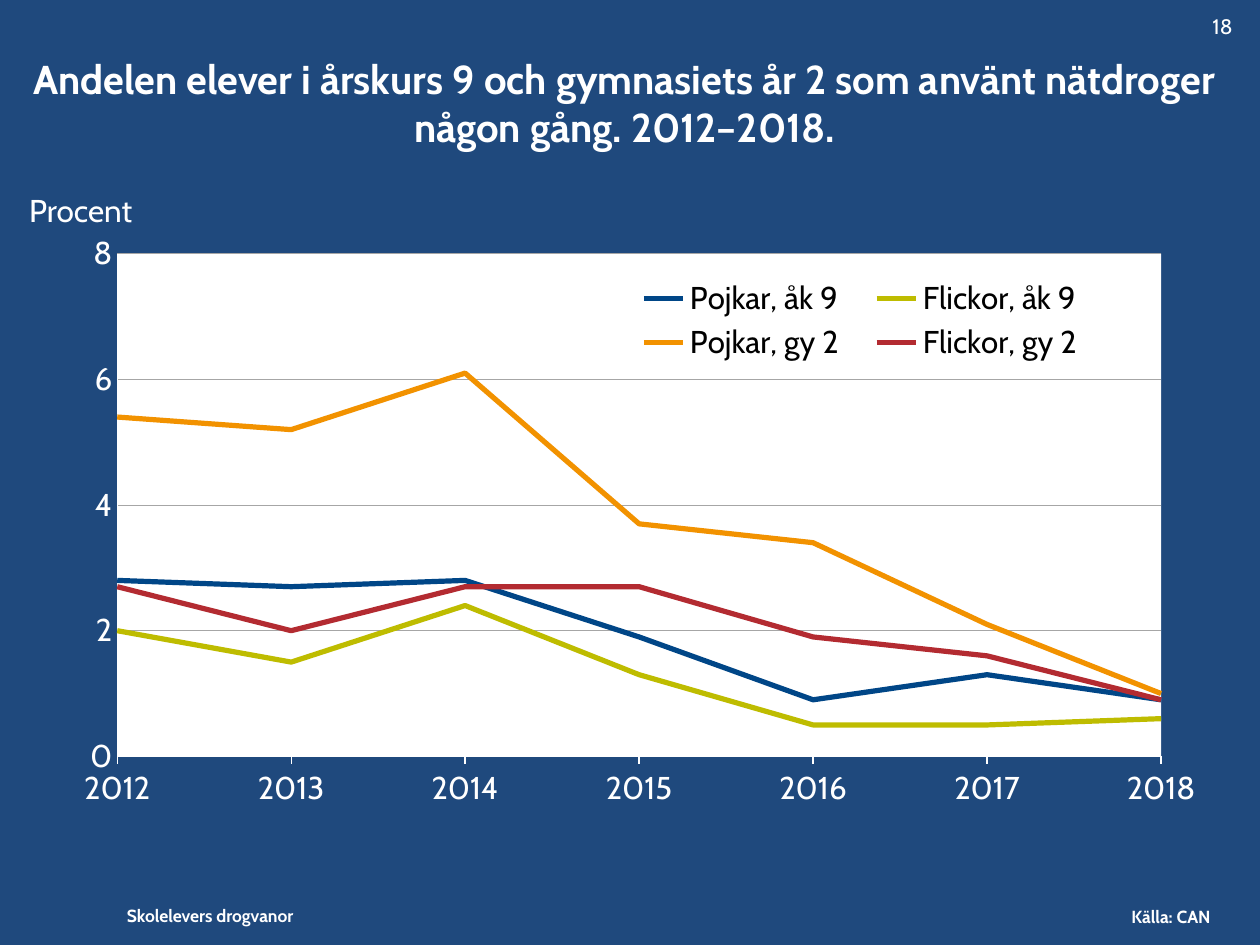
"""Build a slide with a line chart of pupils' use of drugs bought online."""
import pptx
import pptx.chart.data
import pptx.dml.color
import pptx.enum.chart
import pptx.enum.text
import pptx.oxml
import pptx.oxml.ns
import pptx.util
from pptx.util import Cm

COLOURS = {"background": "1F497D", "white": "FFFFFF", "black": "000000", "grid": "A6A6A6"}
FONT = "Cabin"
LEFT, CENTRE, RIGHT = (pptx.enum.text.PP_ALIGN.LEFT, pptx.enum.text.PP_ALIGN.CENTER,
                       pptx.enum.text.PP_ALIGN.RIGHT)
TOP, MIDDLE = pptx.enum.text.MSO_ANCHOR.TOP, pptx.enum.text.MSO_ANCHOR.MIDDLE

TEXTS = [
    ("Skolelevers drogvanor", (2.31, 18.11, 4.25, 0.69), 10, True, LEFT, TOP),
    ("Källa: CAN", (22.56, 18.14, 2.39, 0.69), 10, True, LEFT, TOP),
    ("Andelen elever i årskurs 9 och gymnasiets år 2 som använt nätdroger någon gång. 2012–2018.",
     (0.1, 0.76, 25, 2.62), 23, True, CENTRE, MIDDLE),
    ("Procent", (0.34, 3.73, 2.9, 1.02), 18, False, LEFT, MIDDLE),
    ("18", (23.6, 0.15, 1.5, 0.76), 12, False, RIGHT, TOP),
]
CHART_BOX = (0.99, 3.96, 23.11, 12.83)
PLOT_LAYOUT = (0.06, 0.09, 0.92, 0.79)
LEGEND_LAYOUT = (0.5, 0.12, 0.43, 0.15)
YEARS = [str(year) for year in range(2012, 2019)]
SERIES = [
    ("Pojkar, åk 9", "004687", (2.8, 2.7, 2.8, 1.9, 0.9, 1.3, 0.9)),
    ("Flickor, åk 9", "BEBC00", (2, 1.5, 2.4, 1.3, 0.5, 0.5, 0.6)),
    ("Pojkar, gy 2", "F29200", (5.4, 5.2, 6.1, 3.7, 3.4, 2.1, 1)),
    ("Flickor, gy 2", "B32B31", (2.7, 2, 2.7, 2.7, 1.9, 1.6, 0.9)),
]


def rgb(value):
    return pptx.dml.color.RGBColor.from_string(value)


def style_font(font, size, colour, bold=False):
    font.name = FONT
    font.size = pptx.util.Pt(size)
    font.bold = bold
    font.color.rgb = rgb(colour)


def style_line(line, colour, width):
    line.color.rgb = rgb(colour)
    line.width = pptx.util.Pt(width)


def add_text(slide, text, box, size, bold, alignment, anchor):
    frame = slide.shapes.add_textbox(*map(Cm, box)).text_frame
    frame.word_wrap = True
    frame.vertical_anchor = anchor
    paragraph = frame.paragraphs[0]
    paragraph.text = text
    paragraph.alignment = alignment
    style_font(paragraph.font, size, COLOURS["white"], bold)


def make_layout(values, inner=False):
    target = '<c:layoutTarget val="inner"/>' if inner else ""
    modes = "".join(f'<c:{key}Mode val="edge"/>' for key in "xy")
    sizes = "".join(f'<c:{key} val="{value}"/>' for key, value in zip("xywh", values))
    return pptx.oxml.parse_xml(
        f'<c:layout {pptx.oxml.ns.nsdecls("c")}><c:manualLayout>'
        f"{target}{modes}{sizes}</c:manualLayout></c:layout>")


def set_plot_area(chart):
    area = chart._chartSpace.chart.plotArea
    for layout in area.findall(pptx.oxml.ns.qn("c:layout")):
        area.remove(layout)
    area.insert(0, make_layout(PLOT_LAYOUT, inner=True))
    area.append(pptx.oxml.parse_xml(
        f'<c:spPr {pptx.oxml.ns.nsdecls("c", "a")}><a:solidFill>'
        f'<a:srgbClr val="{COLOURS["white"]}"/></a:solidFill></c:spPr>'))
    major_unit = area.find(".//" + pptx.oxml.ns.qn("c:majorUnit"))
    major_unit.addprevious(pptx.oxml.parse_xml(
        f'<c:crossBetween {pptx.oxml.ns.nsdecls("c")} val="midCat"/>'))


def set_legend(chart):
    chart.has_legend = True
    legend = chart.legend
    legend.position = pptx.enum.chart.XL_LEGEND_POSITION.TOP
    legend.include_in_layout = True
    style_font(legend.font, 18, COLOURS["black"])
    for layout in legend._element.findall(pptx.oxml.ns.qn("c:layout")):
        legend._element.remove(layout)
    position = legend._element.find(pptx.oxml.ns.qn("c:legendPos"))
    position.addnext(make_layout(LEGEND_LAYOUT))


def set_axes(chart):
    tick_mark = pptx.enum.chart.XL_TICK_MARK
    for axis, mark, width in ((chart.category_axis, tick_mark.OUTSIDE, 0.75),
                              (chart.value_axis, tick_mark.NONE, 0.25)):
        axis.major_tick_mark = mark
        axis.minor_tick_mark = tick_mark.NONE
        style_font(axis.tick_labels.font, 18, COLOURS["white"])
        style_line(axis.format.line, COLOURS["white"], width)
    value_axis = chart.value_axis
    value_axis.minimum_scale, value_axis.maximum_scale = 0, 8
    value_axis.major_unit = 2
    value_axis.tick_labels.number_format = "0"
    value_axis.tick_labels.number_format_is_linked = False
    style_line(value_axis.major_gridlines.format.line, COLOURS["grid"], 0.25)


def add_chart(slide):
    data = pptx.chart.data.CategoryChartData()
    data.categories = YEARS
    for name, _, values in SERIES:
        data.add_series(name, values)
    chart = slide.shapes.add_chart(
        pptx.enum.chart.XL_CHART_TYPE.LINE, *map(Cm, CHART_BOX), data).chart
    chart.has_title = False
    style_font(chart.font, 18, COLOURS["white"])
    plot = chart.plots[0]
    plot.vary_by_categories = False
    for series, (_, colour, _) in zip(plot.series, SERIES):
        series.smooth = False
        series.marker.style = pptx.enum.chart.XL_MARKER_STYLE.NONE
        style_line(series.format.line, colour, 3)
    set_axes(chart)
    set_legend(chart)
    set_plot_area(chart)


def main():
    presentation = pptx.Presentation()
    presentation.slide_width, presentation.slide_height = Cm(25.4), Cm(19.05)
    slide = presentation.slides.add_slide(presentation.slide_layouts[6])
    slide.background.fill.solid()
    slide.background.fill.fore_color.rgb = rgb(COLOURS["background"])
    add_chart(slide)
    for text in TEXTS:
        add_text(slide, *text)
    presentation.save("out.pptx")


if __name__ == "__main__":
    main()
